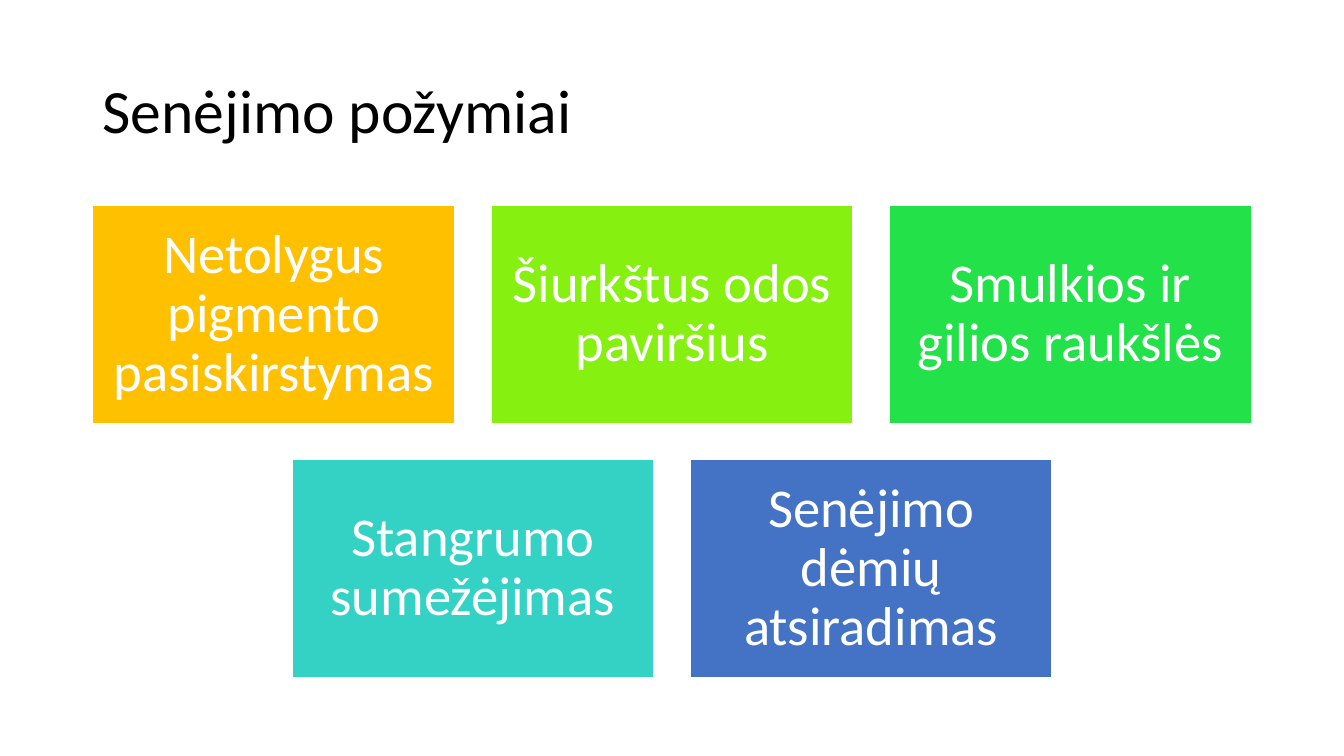
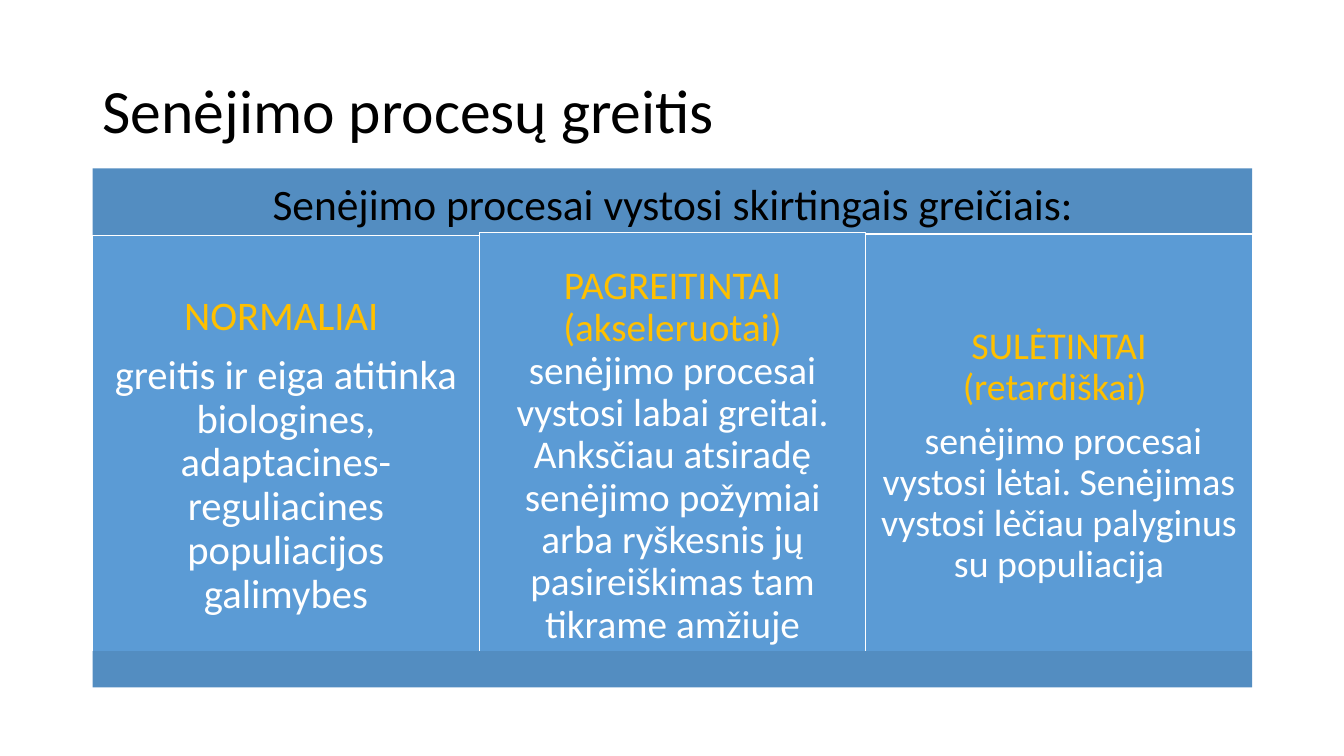
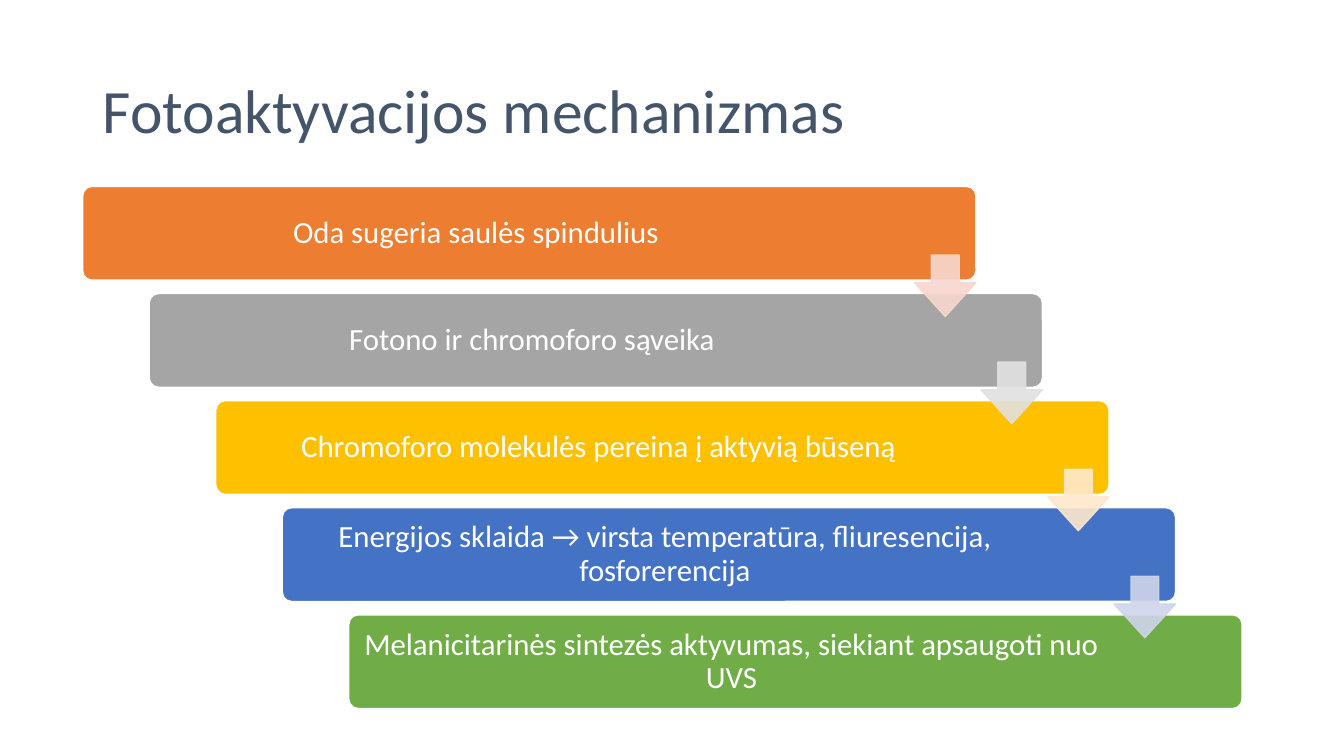
from pptx import Presentation
from pptx.dml.color import RGBColor
from pptx.enum.shapes import MSO_SHAPE
from pptx.enum.text import MSO_ANCHOR, PP_ALIGN
from pptx.oxml.xmlchemy import OxmlElement
from pptx.util import Inches, Pt

RECT, ROUNDED, ARROW = MSO_SHAPE.RECTANGLE, MSO_SHAPE.ROUNDED_RECTANGLE, MSO_SHAPE.DOWN_ARROW
MIDDLE = MSO_ANCHOR.MIDDLE
LEFT, CENTER = PP_ALIGN.LEFT, PP_ALIGN.CENTER

# Shared style
FONT = "Calibri"
WHITE, BLACK, SLATE, GOLD = "FFFFFF", "000000", "44546A", "FFC000"
BAND, PANEL = "538DC1", "5B9BD5"
SLIDE_W, SLIDE_H = 13.33, 7.5
MARGIN, CONTENT_W = 0.92, 11.5

# Content: card rows of (text, fill)
SIGNS = [
    [("Netolygus pigmento pasiskirstymas", GOLD),
     ("Šiurkštus odos paviršius", "86F011"),
     ("Smulkios ir gilios raukšlės", "23E148")],
    [("Stangrumo sumežėjimas", "33D2C5"),
     ("Senėjimo dėmių atsiradimas", "4472C4")],
]

# Columns of (height, inset, size, paragraphs); a paragraph lists (text, colour) runs
SPEED_HEADING = "Senėjimo procesai vystosi skirtingais greičiais:"
SPEEDS = [
    (4.38, 0.12, 29, [
        [("NORMALIAI ", GOLD)],
        [("greitis ir eiga atitinka biologines, adaptacines-reguliacines "
          "populiacijos galimybes", WHITE)]]),
    (4.43, 0.12, 28, [
        [("PAGREITINTAI (akseleruotai)", GOLD),
         (" senėjimo procesai vystosi labai greitai. Anksčiau atsiradę senėjimo "
          "požymiai arba ryškesnis jų pasireiškimas tam tikrame amžiuje", WHITE)]]),
    (4.41, 0.11, 27, [
        [("SULĖTINTAI (retardiškai) ", GOLD)],
        [(" senėjimo procesai vystosi lėtai. Senėjimas vystosi lėčiau palyginus "
          "su populiacija", WHITE)]]),
]

# Steps of (text, fill, right inset), and the arrows between them
STEPS = [
    ("Oda sugeria saulės spindulius", "ED7D31", 1.15),
    ("Fotono ir chromoforo sąveika", "A5A5A5", 1.36),
    ("Chromoforo molekulės pereina į aktyvią būseną", GOLD, 1.36),
    ("Energijos sklaida → virsta temperatūra, fliuresencija, fosforerencija", "4472C4", 1.36),
    ("Melanicitarinės sintezės aktyvumas, siekiant apsaugoti nuo UVS", "70AD47", 1.36),
]
ARROW_FILLS = ["F8D7CE", "E1E1E1", "FFE8CC", "CFD5EA"]


def rgb(value):
    return RGBColor.from_string(value)


def set_alpha(fill, percent):
    alpha = OxmlElement("a:alpha")
    alpha.set("val", str(percent * 1000))
    fill._xPr.find(".//{*}srgbClr").append(alpha)


def write(sp, paragraphs, size, insets, align=CENTER):
    """Fill a shape with paragraphs, each a list of (text, colour) runs."""
    tf = sp.text_frame
    tf.word_wrap = True
    tf.vertical_anchor = MIDDLE
    tf.margin_left, tf.margin_top, tf.margin_right, tf.margin_bottom = map(Inches, insets)
    for i, runs in enumerate(paragraphs):
        p = tf.add_paragraph() if i else tf.paragraphs[0]
        p.alignment = align
        p.line_spacing = 0.9
        if i:
            p.space_before = Pt(round(0.37 * size))
        p.font.name, p.font.size = FONT, Pt(size)
        same = len({color for _, color in runs}) == 1
        if same:
            p.font.color.rgb = rgb(runs[0][1])
        for text, color in runs:
            r = p.add_run()
            r.text = text
            if not same:
                r.font.color.rgb = rgb(color)


def add_box(s, kind, x, y, w, h, fill, line=None, adjust=()):
    sp = s.shapes.add_shape(kind, Inches(x), Inches(y), Inches(w), Inches(h))
    sp.shadow.inherit = False
    for i, value in enumerate(adjust):
        sp.adjustments[i] = value
    sp.fill.solid()
    sp.fill.fore_color.rgb = rgb(fill)
    if line:
        sp.line.color.rgb = rgb(line)
        sp.line.width = Pt(1)
    else:
        sp.line.fill.background()
    return sp


def add_slide(prs, title, color=BLACK):
    s = prs.slides.add_slide(prs.slide_layouts[6])
    sp = s.shapes.add_textbox(Inches(MARGIN), Inches(0.4), Inches(CONTENT_W), Inches(1.45))
    write(sp, [[(title, color)]], 44, (0.1, 0.05, 0.1, 0.05), LEFT)
    return s


def build_signs(prs):
    s = add_slide(prs, "Senėjimo požymiai")
    w, h, gap, top = 3.59, 2.16, 0.36, 2.04
    for row, cards in enumerate(SIGNS):
        row_w = len(cards) * (w + gap) - gap
        left = (SLIDE_W - row_w) / 2
        for col, (text, fill) in enumerate(cards):
            sp = add_box(s, RECT, left + col * (w + gap), top + row * (h + gap),
                         w, h, fill, WHITE)
            write(sp, [[(text, WHITE)]], 39, [0.16] * 4)


def build_speeds(prs):
    s = add_slide(prs, "Senėjimo procesų greitis")
    heading = add_box(s, RECT, MARGIN, 1.67, CONTENT_W, 0.75, BAND)
    write(heading, [[(SPEED_HEADING, BLACK)]], 31, [0.13] * 4)
    # Columns share one horizontal axis
    w, axis = CONTENT_W / len(SPEEDS), 4.525
    for i, (h, inset, size, paragraphs) in enumerate(SPEEDS):
        sp = add_box(s, RECT, MARGIN + i * w, axis - h / 2, w, h, PANEL, WHITE)
        write(sp, paragraphs, size, [inset] * 4)
    add_box(s, RECT, MARGIN, 6.46, CONTENT_W, 0.36, BAND)


def build_steps(prs):
    s = add_slide(prs, "Fotoaktyvacijos mechanizmas", SLATE)
    w, h, arrow = 8.86, 0.93, 0.61
    last = len(STEPS) - 1
    spots = [(0.82 + 0.66 * i, 1.85 + 4.25 * i / last) for i in range(len(STEPS))]
    for (x, y), (text, fill, right) in zip(spots, STEPS):
        sp = add_box(s, ROUNDED, x, y, w, h, fill, WHITE, [0.1])
        write(sp, [[(text, WHITE)]], 22, (0.09, 0.09, right, 0.09))
    # Arrows lie over the bars, flush with the right end of each
    for (x, y), fill in zip(spots, ARROW_FILLS):
        sp = add_box(s, ARROW, x + w - arrow, y + 0.68, arrow, arrow, fill, fill, [0.45, 0.55])
        set_alpha(sp.fill, 90)
        set_alpha(sp.line.fill, 90)


def main():
    prs = Presentation()
    prs.slide_width, prs.slide_height = Inches(SLIDE_W), Inches(SLIDE_H)
    build_signs(prs)
    build_speeds(prs)
    build_steps(prs)
    prs.save("out.pptx")


if __name__ == "__main__":
    main()
